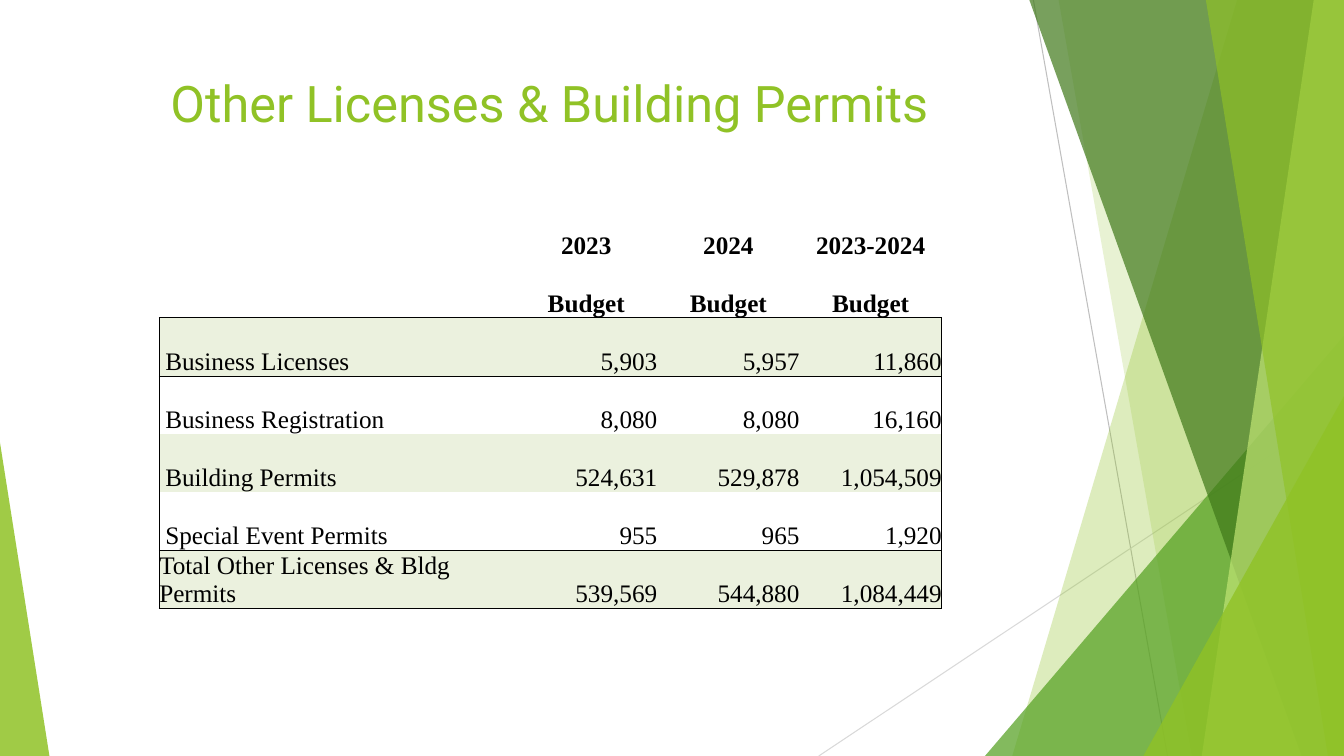
from lxml.etree import SubElement
from pptx import Presentation
from pptx.dml.color import RGBColor as Rgb
from pptx.enum.shapes import MSO_CONNECTOR as Link, MSO_SHAPE as Kind
from pptx.enum.text import MSO_ANCHOR as Anchor, PP_ALIGN as Align
from pptx.oxml.ns import qn
from pptx.util import Inches, Pt

WIDE, HIGH = Inches(13.33), Inches(7.5)
INK = {
    "lime": "90C226", "green": "54A021", "forest": "3F7819", "pale": "C0E474",
    "silver": "BFBFBF", "mist": "D9D9D9", "black": "000000", "band": "EBF1DE",
}
PLAIN = "{2D5ABB26-0587-4C30-8999-92F81FD0307C}"
COLS = [24.08, 2.4] + [10.58] * 3
ROW = 7.68
BODY = 2
ROWS = [
    ("", "2023", "2024", "2023-2024"),
    ("", "Budget", "Budget", "Budget"),
    ("Business Licenses", "5,903", "5,957", "11,860"),
    ("Business Registration", "8,080", "8,080", "16,160"),
    ("Building Permits", "524,631", "529,878", "1,054,509"),
    ("Special Event Permits", "955", "965", "1,920"),
    ("Total Other Licenses & Bldg Permits", "539,569", "544,880", "1,084,449"),
]
RAYS = [
    (76.89, 0, 86.87, 100, "silver"),
    (100, 53.73, 60.92, 100, "mist"),
]
BACK = [(92.05, 75.32, "lime", 30), (78.77, 88.67, "lime", 20)]
FRONT = [
    (76.59, 96.85, "forest", 70),
    (97.75, 89.42, "pale", 70),
    (89.72, 98.8, "lime", 65),
]


def across(share):
    """Turn a percentage of the slide width into a length."""
    return round(WIDE * share / 100)


def down(share):
    """Turn a percentage of the slide height into a length."""
    return round(HIGH * share / 100)


def tone(name):
    """Look up a colour by name."""
    return Rgb.from_string(INK[name])


def write(frame, text, font="Times New Roman", size=18, ink="black",
          bold=False, align=Align.LEFT):
    """Put one formatted paragraph in a text frame."""
    para = frame.paragraphs[0]
    para.alignment = align
    run = para.add_run()
    run.text = text
    run.font.name, run.font.size, run.font.bold = font, Pt(size), bold
    run.font.color.rgb = tone(ink)


def tint(shape, ink, alpha):
    """Give a shape a see-through fill and no outline or shadow."""
    shape.shadow.inherit = False
    shape.line.fill.background()
    shape.fill.solid()
    shape.fill.fore_color.rgb = tone(ink)
    color = shape._element.spPr.find(".//" + qn("a:srgbClr"))
    SubElement(color, qn("a:alpha"), val=str(alpha * 1000))


def ray(slide, left, top, right, base, ink):
    """Draw a thin straight line."""
    line = slide.shapes.add_connector(
        Link.STRAIGHT, across(left), down(top), across(right), down(base))
    line.line.color.rgb = tone(ink)
    line.line.width = Pt(0.75)
    SubElement(line._element.spPr, qn("a:effectLst"))


def blade(slide, top, base, ink, alpha):
    """Fill the area from a slanted edge to the right side of the slide."""
    form = slide.shapes.build_freeform(across(top), 0, scale=1.0)
    form.add_line_segments(
        [(WIDE, 0), (WIDE, HIGH), (across(base), HIGH)], close=True)
    tint(form.convert_to_shape(), ink, alpha)


def wedge(slide, left, top, width, peak, ink, alpha):
    """Stand a triangle on the bottom edge of the slide."""
    shape = slide.shapes.add_shape(
        Kind.ISOSCELES_TRIANGLE, across(left), down(top),
        across(width), HIGH - down(top))
    shape.adjustments[0] = peak
    tint(shape, ink, alpha)


def decor(slide):
    """Draw the green facets from back to front."""
    for item in RAYS:
        ray(slide, *item)
    for item in BACK:
        blade(slide, *item)
    wedge(slide, 73.29, 44.4, 26.71, 1, "green", 72)
    for item in FRONT:
        blade(slide, *item)
    wedge(slide, 85.07, 52.4, 14.93, 1, "lime", 80)
    wedge(slide, 0, 58.53, 3.68, 0, "lime", 85)


def head(slide, text):
    """Place and fill the title."""
    title = slide.shapes.title
    title.left, title.top = across(5.63), down(8.93)
    title.width, title.height = across(70.52), down(14.4)
    title.text_frame.vertical_anchor = Anchor.TOP
    write(title.text_frame, text, font="Roboto", size=36, ink="lime",
          align=Align.CENTER)


def edge(cell, sides):
    """Rule the given sides of a cell in black."""
    props = cell._tc.get_or_add_tcPr()
    for side in sides:
        line = SubElement(props, qn("a:ln" + side), w=str(Pt(0.5)))
        fill = SubElement(line, qn("a:solidFill"))
        SubElement(fill, qn("a:srgbClr"), val=INK["black"])


def sides(row, col):
    """Name the ruled sides of the cell at a row and column."""
    last, end = len(ROWS) - 1, len(COLS) - 1
    rules = {
        "L": row >= BODY and col == 0,
        "R": row >= BODY and col == end,
        "T": row in (BODY, last),
        "B": row in (BODY - 1, last - 1, last),
    }
    return [side for side, drawn in rules.items() if drawn]


def dress(cell, row, col):
    """Set the inset, rules and fill of a cell."""
    cell.margin_left = cell.margin_right = 0
    cell.margin_top = cell.margin_bottom = 0
    cell.vertical_anchor = Anchor.BOTTOM
    if col == 0 and BODY <= row < len(ROWS) - 1:
        cell.margin_left = Inches(0.06)
    edge(cell, sides(row, col))
    if row >= BODY and row % 2 == 0:
        cell.fill.solid()
        cell.fill.fore_color.rgb = tone("band")
    else:
        cell.fill.background()


def budget(slide):
    """Build the budget table."""
    table = slide.shapes.add_table(
        len(ROWS), len(COLS), across(11.85), down(26.67),
        across(sum(COLS)), down(ROW * len(ROWS))).table
    table.first_row = table.horz_banding = False
    table._tbl.tblPr.find(qn("a:tableStyleId")).text = PLAIN
    for col, share in zip(table.columns, COLS):
        col.width = across(share)
    for row, (label, *sums) in enumerate(ROWS):
        table.rows[row].height = down(ROW)
        for col, text in enumerate([label, "", *sums]):
            cell = table.cell(row, col)
            dress(cell, row, col)
            if text:
                top = row < BODY
                side = Align.CENTER if top else Align.RIGHT if col else Align.LEFT
                write(cell.text_frame, text, bold=top, align=side)
    last = len(ROWS) - 1
    table.cell(last, 0).merge(table.cell(last, 1))


def main():
    """Build and save the slide."""
    deck = Presentation()
    deck.slide_width, deck.slide_height = WIDE, HIGH
    slide = deck.slides.add_slide(deck.slide_layouts[5])
    decor(slide)
    head(slide, "Other Licenses & Building Permits")
    budget(slide)
    deck.save("out.pptx")


if __name__ == "__main__":
    main()
